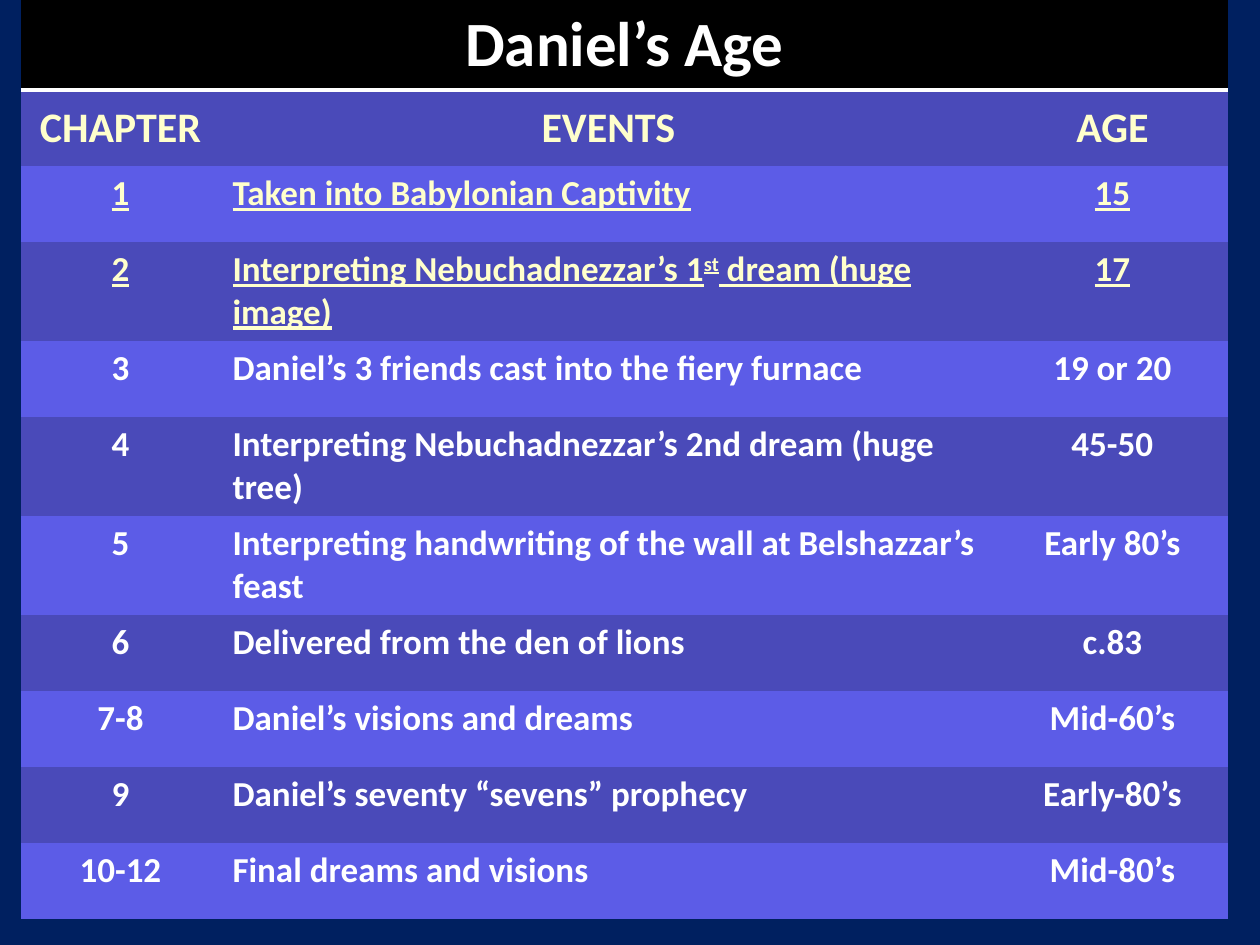
from lxml.etree import SubElement
from pptx import Presentation
from pptx.dml.color import RGBColor
from pptx.enum.text import MSO_ANCHOR, PP_ALIGN
from pptx.oxml.ns import qn
from pptx.util import Emu, Pt

TITLE = "Daniel’s Age"
HEADINGS = ("CHAPTER", "EVENTS", "AGE")
EVENTS = [
    ("1", ["Taken into Babylonian Captivity"], "15"),
    ("2", ["Interpreting Nebuchadnezzar’s 1", "st", " dream (huge image)"], "17"),
    ("3", ["Daniel’s 3 friends cast into the fiery furnace"], "19 or 20"),
    ("4", ["Interpreting Nebuchadnezzar’s 2nd dream (huge tree)"], "45-50"),
    ("5", ["Interpreting handwriting of the wall at Belshazzar’s feast"], "Early 80’s"),
    ("6", ["Delivered from the den of lions"], "c.83"),
    ("7-8", ["Daniel’s visions and dreams"], "Mid-60’s"),
    ("9", ["Daniel’s seventy “sevens” prophecy"], "Early-80’s"),
    ("10-12", ["Final dreams and visions"], "Mid-80’s"),
]
UNDERLINED = ("1", "2")
TWO_LINE = ("2", "4", "5")
COLUMNS = (199, 777, 231)
LEFT, TITLE_HEIGHT, ROW_HEIGHT, TALL_HEIGHT = 21, 90, 76, 99
NAVY, BLACK, WHITE, CREAM = "002060", "000000", "FFFFFF", "FFFFCC"
BANDS = ("4A4AB9", "5C5CE7")
PLAIN_STYLE = "{2D5ABB26-0587-4C30-8999-92F81FD0307C}"


def px(count):
    return Emu(round(count * 914400 / 126))


def rgb(code):
    return RGBColor.from_string(code)


def fill_cell(cell, parts, background, size, color, centred=True, underline=False):
    cell.fill.solid()
    cell.fill.fore_color.rgb = rgb(background)
    paragraph = cell.text_frame.paragraphs[0]
    paragraph.alignment = PP_ALIGN.CENTER if centred else PP_ALIGN.LEFT
    for part in parts:
        run = paragraph.add_run()
        run.text = part
        run.font.name = "Calibri"
        run.font.size = Pt(size)
        run.font.bold = True
        run.font.underline = underline
        run.font.color.rgb = rgb(color)
        if part == "st":
            run.font.element.set("baseline", "30000") if hasattr(run.font, "element") else run._r.get_or_add_rPr().set("baseline", "30000")


def rule_below(cell, color, width):
    properties = cell._tc.get_or_add_tcPr()
    border = SubElement(properties, qn("a:lnB"), w=str(Pt(width)))
    SubElement(SubElement(border, qn("a:solidFill")), qn("a:srgbClr"), val=color)
    properties.insert(0, border)


def main():
    """Build the slide that lists Daniel's age at each event."""
    deck = Presentation()
    deck.slide_width, deck.slide_height = px(1260), px(945)
    slide = deck.slides.add_slide(deck.slide_layouts[6])
    slide.background.fill.solid()
    slide.background.fill.fore_color.rgb = rgb(NAVY)

    heights = [TITLE_HEIGHT, ROW_HEIGHT]
    heights += [TALL_HEIGHT if event[0] in TWO_LINE else ROW_HEIGHT for event in EVENTS]
    frame = slide.shapes.add_table(len(heights), len(COLUMNS), px(LEFT), 0,
                                   px(sum(COLUMNS)), px(sum(heights)))
    ages = frame.table
    ages.first_row = ages.horz_banding = False
    ages._tbl.tblPr.find(qn("a:tableStyleId")).text = PLAIN_STYLE
    for column, width in zip(ages.columns, COLUMNS):
        column.width = px(width)
    for row, height in zip(ages.rows, heights):
        row.height = px(height)

    ages.cell(0, 0).merge(ages.cell(0, 2))
    fill_cell(ages.cell(0, 0), [TITLE], BLACK, 36, WHITE)
    for title_cell in ages.rows[0].cells:
        rule_below(title_cell, WHITE, 2)
    for heading_cell, heading in zip(ages.rows[1].cells, HEADINGS):
        fill_cell(heading_cell, [heading], BANDS[0], 24, CREAM)
        heading_cell.vertical_anchor = MSO_ANCHOR.MIDDLE

    for index, (chapter, event, age) in enumerate(EVENTS, 1):
        underline = chapter in UNDERLINED
        color = CREAM if underline else WHITE
        for column, parts in enumerate(([chapter], event, [age])):
            fill_cell(ages.cell(index + 1, column), parts, BANDS[index % 2], 20, color,
                      centred=column != 1, underline=underline)

    deck.save("out.pptx")


if __name__ == "__main__":
    main()
